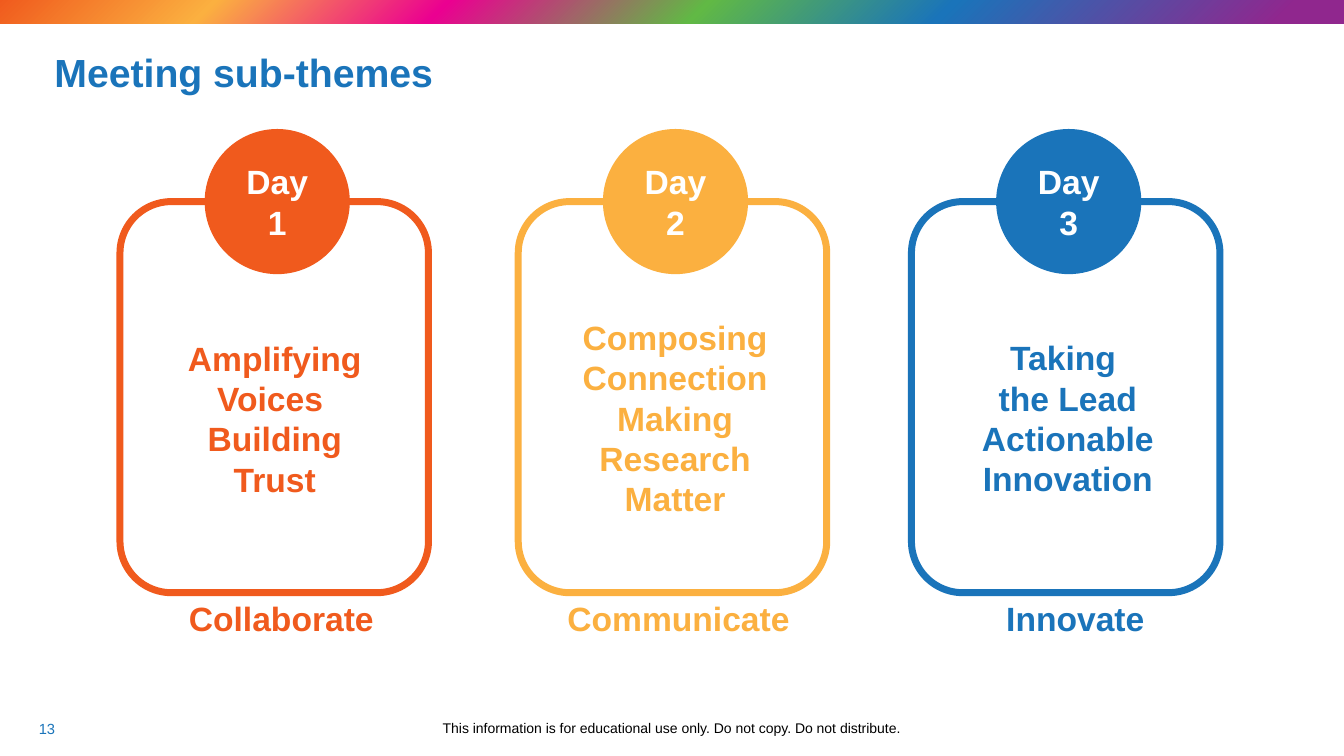
from dataclasses import dataclass

from lxml.etree import SubElement
from pptx import Presentation
from pptx.dml.color import RGBColor
from pptx.enum.shapes import MSO_SHAPE
from pptx.enum.text import MSO_ANCHOR, PP_ALIGN
from pptx.oxml.ns import qn
from pptx.util import Inches, Pt

ORANGE, YELLOW, BLUE = "F05A1D", "FBB040", "1A74BA"
WHITE, BLACK = "FFFFFF", "000000"
RAINBOW = [(0, ORANGE), (16, YELLOW), (33, "EB0091"),
           (52, "61B945"), (70, BLUE), (95, "90278E")]
CARD_TOP, CARD_WIDTH, CARD_HEIGHT = 2, 3.06, 3.88
CIRCLE_TOP, CIRCLE_SIZE, CIRCLE_OFFSET = 1.28, 1.44, 0.84


@dataclass
class Box:
    left: float
    top: float
    width: float
    height: float

    def emu(self) -> list:
        return [Inches(v) for v in (self.left, self.top, self.width, self.height)]


@dataclass
class Day:
    label: str
    color: str
    left: float
    theme: str
    theme_box: Box
    goal: str
    goal_box: Box


DAYS = [
    Day("Day 1", ORANGE, 1.19, "Amplifying Voices \nBuilding Trust",
        Box(1.67, 2.8, 2.11, 2.7), "Collaborate", Box(1.44, 5.88, 2.7, 0.5)),
    Day("Day 2", YELLOW, 5.14, "Composing Connection Making Research Matter",
        Box(5.35, 3.03, 2.69, 2.23), "Communicate", Box(5.26, 5.88, 2.94, 0.5)),
    Day("Day 3", BLUE, 9.04, "Taking \vthe Lead Actionable Innovation",
        Box(9.4, 3.17, 2.38, 1.95), "Innovate", Box(9.19, 5.88, 2.95, 0.5)),
]


def rgb(color: str) -> RGBColor:
    return RGBColor.from_string(color)


def write(sp, text: str, size: float, color: str, bold: bool = True,
          align=PP_ALIGN.CENTER, anchor=MSO_ANCHOR.TOP) -> None:
    tf = sp.text_frame
    tf.word_wrap = True
    tf.vertical_anchor = anchor
    tf.text = text
    for p in tf.paragraphs:
        p.alignment = align
        p.font.name = "Arial"
        p.font.size = Pt(size)
        p.font.bold = bold
        p.font.color.rgb = rgb(color)


def add_text(s, box: Box, text: str, size: float, color: str,
             bold: bool = True, anchor=MSO_ANCHOR.TOP) -> None:
    sp = s.shapes.add_textbox(*box.emu())
    write(sp, text, size, color, bold, anchor=anchor)


def add_preset(shapes, preset, box: Box):
    sp = shapes.add_shape(preset, *box.emu())
    sp.shadow.inherit = False
    return sp


def add_rainbow_bar(s) -> None:
    sp = add_preset(s.shapes, MSO_SHAPE.RECTANGLE, Box(-0.01, -0.01, 13.35, 0.24))
    sp.line.fill.background()
    sp.fill.gradient()
    grad = sp.element.spPr.find(qn("a:gradFill"))
    stops = grad.find(qn("a:gsLst"))
    for stop in list(stops):
        stops.remove(stop)
    for percent, color in RAINBOW:
        stop = SubElement(stops, qn("a:gs"), pos=str(percent * 1000))
        SubElement(stop, qn("a:srgbClr"), val=color)
    grad.find(qn("a:lin")).set("ang", str(45 * 60000))


def add_card(s, day: Day) -> None:
    group = s.shapes.add_group_shape()
    card = add_preset(group.shapes, MSO_SHAPE.ROUNDED_RECTANGLE,
                      Box(day.left, CARD_TOP, CARD_WIDTH, CARD_HEIGHT))
    card.fill.background()
    card.line.color.rgb = rgb(day.color)
    card.line.width = Pt(5)
    circle = add_preset(group.shapes, MSO_SHAPE.OVAL,
                        Box(day.left + CIRCLE_OFFSET, CIRCLE_TOP, CIRCLE_SIZE, CIRCLE_SIZE))
    circle.fill.solid()
    circle.fill.fore_color.rgb = rgb(day.color)
    circle.line.fill.background()
    write(circle, day.label, 24, WHITE, anchor=MSO_ANCHOR.MIDDLE)


def add_title(s, box: Box, text: str) -> None:
    title = s.shapes.title
    title.left, title.top, title.width, title.height = box.emu()
    write(title, text, 28, BLUE, align=PP_ALIGN.LEFT, anchor=MSO_ANCHOR.MIDDLE)
    title.text_frame.paragraphs[0].line_spacing = 0.9


def main() -> None:
    prs = Presentation()
    prs.slide_width, prs.slide_height = Inches(13.33), Inches(7.5)
    s = prs.slides.add_slide(prs.slide_layouts[5])
    add_rainbow_bar(s)
    add_title(s, Box(0.44, 0.21, 9.87, 1.07), "Meeting sub-themes")
    add_text(s, Box(0.24, 7.09, 0.45, 0.4), "13", 10.5, BLUE, bold=False)
    add_text(s, Box(0.38, 7.09, 12.56, 0.4),
             "This information is for educational use only. Do not copy. Do not distribute.",
             10, BLACK, bold=False)
    for day in DAYS:
        add_text(s, day.theme_box, day.theme, 24, day.color, anchor=MSO_ANCHOR.MIDDLE)
        add_card(s, day)
        add_text(s, day.goal_box, day.goal, 24, day.color)
    prs.save("out.pptx")


if __name__ == "__main__":
    main()
